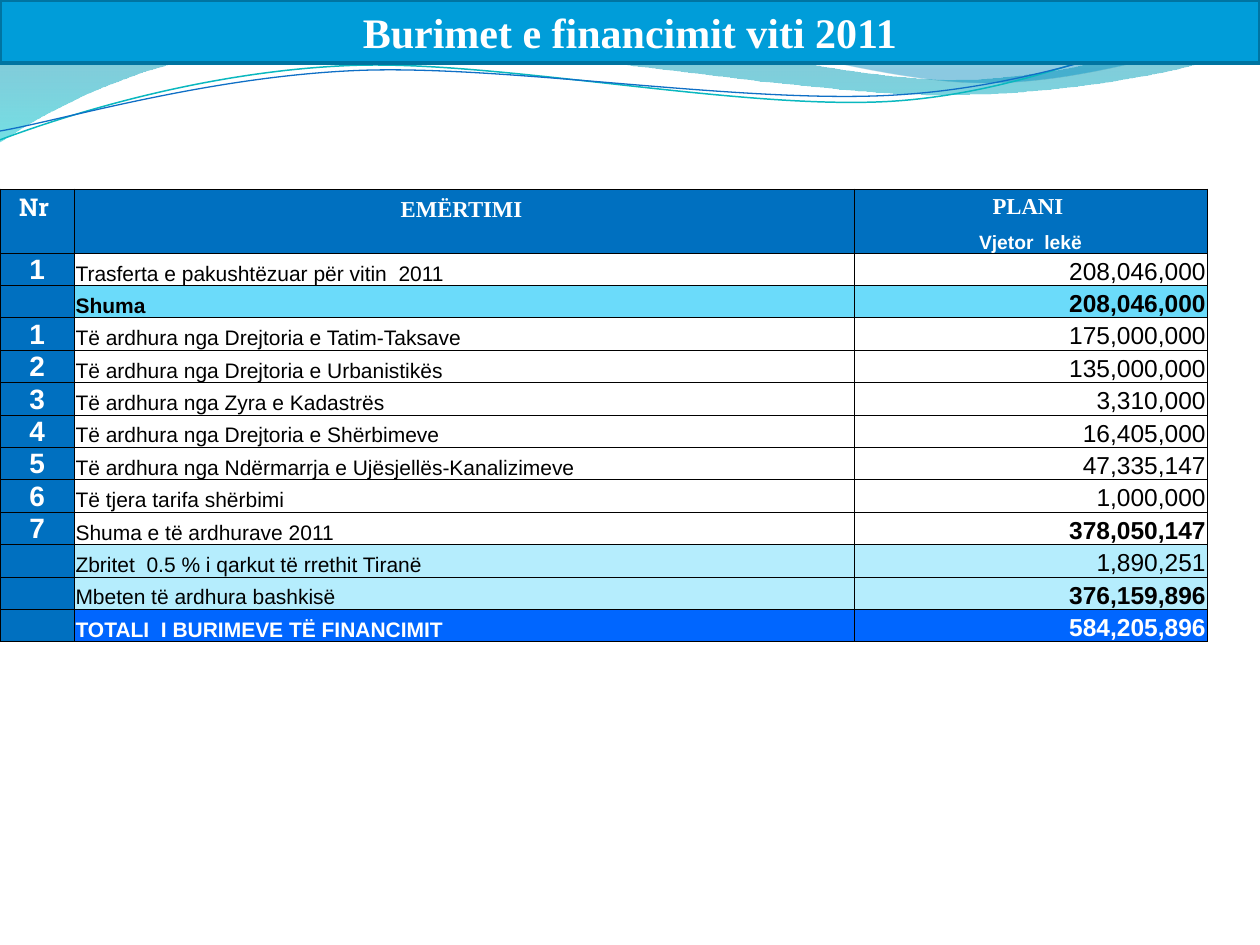
from math import cos, radians, sin
from lxml.etree import SubElement
from pptx import Presentation
from pptx.dml.color import RGBColor
from pptx.enum.text import MSO_ANCHOR as Anchor, MSO_AUTO_SIZE as AutoSize, PP_ALIGN as Align
from pptx.oxml.ns import qn
from pptx.util import Inches, Pt

COLORS = {
    "white": "FFFFFF", "black": "000000", "banner": "009DD9", "edge": "0074A1",
    "header": "0070C0", "subtotal": "6BDBFA", "net": "B5EDFD", "total": "0066FF",
    "cyan": "00C6CF", "teal": "00A1A9", "sea": "008BBF", "teal_line": "0AB8BF", "blue_line": "0F6FC6",
}
RGB = {name: RGBColor.from_string(value) for name, value in COLORS.items()}


def draw_wave(shapes, steps, close, center=(0, 0), tilt=0):
    turn = radians(tilt)
    points = []
    for step in steps:
        for x, y in zip(step[::2], step[1::2]):
            dx, dy = x - center[0], y - center[1]
            points.append((Inches(center[0] + dx * cos(turn) - dy * sin(turn)),
                           Inches(center[1] + dx * sin(turn) + dy * cos(turn))))
    builder = shapes.build_freeform(*points[0])
    builder.add_line_segments(points[1:], close=close)
    wave = builder.convert_to_shape()
    wave.shadow.inherit = False
    wave.rotation = -tilt % 360
    segments = wave._element.spPr.iter(qn("a:lnTo"))
    segments = list(segments)
    for step in steps[1:]:
        first = segments.pop(0)
        if len(step) == 6:
            first.tag = qn("a:cubicBezTo")
            for extra in (segments.pop(0), segments.pop(0)):
                first.append(extra[0])
                extra.getparent().remove(extra)
    return wave


def write(frame, text, size, font, color, bold, align):
    para = frame.paragraphs[0]
    para.alignment = align
    span = para.add_run()
    span.text = text
    span.font.size = Pt(size)
    span.font.name = font
    span.font.bold = bold
    span.font.color.rgb = RGB[color]


deck = Presentation()
deck.slide_width, deck.slide_height = Inches(10), Inches(7.5)
page = deck.slides.add_slide(deck.slide_layouts[5])

bands = [
    ([(0, 0), (4.4, -0.01), (4.76, 0.17, 6.64, 0.63, 7.58, 0.63), (8.53, 0.63, 9.58, 0.26, 10, 0.09),
      (10.01, 0.36), (9.83, 0.44, 8.7, 0.76, 7.46, 0.75), (6.22, 0.75, 3.82, 0.28, 2.57, 0.34),
      (1.29, 0.36, 0.46, 0.83, -0.01, 1.13), (0, 0)],
     [(0, "edge", 45), (1, "cyan", 55)]),
    ([(4.79, -0.01), (5.09, 0.11, 6.82, 0.62, 7.69, 0.65), (8.56, 0.69, 9.61, 0.32, 10, 0.21), (10, 0),
      (4.79, -0.01)],
     [(0, "teal", 30), (0.8, "sea", 45)]),
]
for steps, stops in bands:
    band = draw_wave(page.shapes, steps, True)
    band.line.fill.background()
    band.fill.gradient()
    band.fill.gradient_angle = 270
    for stop, (position, color, opacity) in zip(band.fill.gradient_stops, stops):
        stop.position = position
        stop.color.rgb = RGB[color]
    for node, (position, color, opacity) in zip(band._element.spPr.iter(qn("a:srgbClr")), stops):
        SubElement(node, qn("a:alpha"), val=str(opacity * 1000))

strands = [
    ([(0, 1.11), (0.48, 0.93, 1.58, 0.57, 2.77, 0.52), (3.95, 0.47, 5.93, 0.89, 7.13, 0.8),
      (8.33, 0.71, 9.38, 0.15, 9.98, -0.02)], (4.99, 0.58), "teal_line", 0.85),
    ([(0, 1.04), (0.47, 0.96, 1.64, 0.61, 2.83, 0.56), (4.03, 0.51, 5.97, 0.84, 7.17, 0.75),
      (8.36, 0.67, 9.41, 0.21, 10, 0.06)], (5, 0.59), "blue_line", 0.75),
]
strand_group = page.shapes.add_group_shape()
for steps, center, color, width in strands:
    strand = draw_wave(strand_group.shapes, steps, False, center, 2.7)
    strand.fill.background()
    strand.line.color.rgb = RGB[color]
    strand.line.width = Pt(width)

header = [
    [("Nr ", 14, "Roboto Slab"), ("EMËRTIMI ", 13, "Times New Roman"), ("PLANI ", 13, "Times New Roman")],
    [("", 11, "Arial"), ("", 11, "Arial"), ("Vjetor  lekë", 11, "Arial")],
]
sources = [
    ("1", "Trasferta e pakushtëzuar për vitin  2011", "208,046,000", None, False, False),
    ("", "Shuma", "208,046,000", "subtotal", True, True),
    ("1", "Të ardhura nga Drejtoria e Tatim-Taksave", "175,000,000", None, False, False),
    ("2", "Të ardhura nga Drejtoria e Urbanistikës", "135,000,000", None, False, False),
    ("3", "Të ardhura nga Zyra e Kadastrës", "3,310,000", None, False, False),
    ("4", "Të ardhura nga Drejtoria e Shërbimeve", "16,405,000", None, False, False),
    ("5", "Të ardhura nga Ndërmarrja e Ujësjellës-Kanalizimeve", "47,335,147", None, False, False),
    ("6", "Të tjera tarifa shërbimi", "1,000,000", None, False, False),
    ("7", "Shuma e të ardhurave 2011", "378,050,147", None, False, True),
    ("", "Zbritet  0.5 % i qarkut të rrethit Tiranë", "1,890,251", "net", False, False),
    ("", "Mbeten të ardhura bashkisë", "376,159,896", "net", False, True),
    ("", "TOTALI  I BURIMEVE TË FINANCIMIT", "584,205,896", "total", True, True),
]
rows = [[(*entry, "white", True, Align.CENTER, "header") for entry in row] for row in header]
for number, name, amount, fill, bold_name, bold_amount in sources:
    ink = "white" if fill == "total" else "black"
    rows.append([
        (number, 16, "Arial", "white", True, Align.CENTER, "header"),
        (name, 12, "Arial", ink, bold_name, Align.LEFT, fill),
        (amount, 14, "Arial", ink, bold_amount, Align.RIGHT, fill),
    ])

row_height = Inches(0.24)
table = page.shapes.add_table(len(rows), 3, Inches(0), Inches(1.5), Inches(9.58), row_height * len(rows)).table
for column, width in zip(table.columns, (0.59, 6.19, 2.8)):
    column.width = Inches(width)
for r, row in enumerate(rows):
    for c, (text, size, font, color, bold, align, fill) in enumerate(row):
        cell = table.cell(r, c)
        cell.margin_left = cell.margin_right = cell.margin_top = Inches(0.01)
        cell.margin_bottom = 0
        cell.vertical_anchor = Anchor.MIDDLE if (r, c) == (0, 2) else Anchor.BOTTOM
        if text:
            write(cell.text_frame, text, size, font, color, bold, align)
        else:
            end = SubElement(cell.text_frame.paragraphs[0]._p, qn("a:endParaRPr"), sz=str(size * 100))
            SubElement(end, qn("a:latin"), typeface=font)
        properties = cell._tc.get_or_add_tcPr()
        for side in ("L", "R", "T", "B"):
            border = SubElement(properties, qn(f"a:ln{side}"), w=str(Pt(0.5)))
            if (r, side) in ((0, "B"), (1, "T")):
                SubElement(border, qn("a:noFill"))
            else:
                SubElement(SubElement(border, qn("a:solidFill")), qn("a:srgbClr"), val=COLORS["black"])
        if fill:
            cell.fill.solid()
            cell.fill.fore_color.rgb = RGB[fill]
        else:
            cell.fill.background()

title = page.shapes.title
title.left, title.top, title.width, title.height = Inches(0), Inches(0), Inches(10), Inches(0.5)
title.fill.solid()
title.fill.fore_color.rgb = RGB["banner"]
title.line.color.rgb = RGB["edge"]
title.line.width = Pt(2)
title.text_frame.auto_size = AutoSize.NONE
title.text_frame.vertical_anchor = Anchor.MIDDLE
write(title.text_frame, "Burimet e financimit viti 2011", 24, "Times New Roman", "white", True, Align.CENTER)
page.shapes._spTree.append(title._element)

deck.save("out.pptx")
